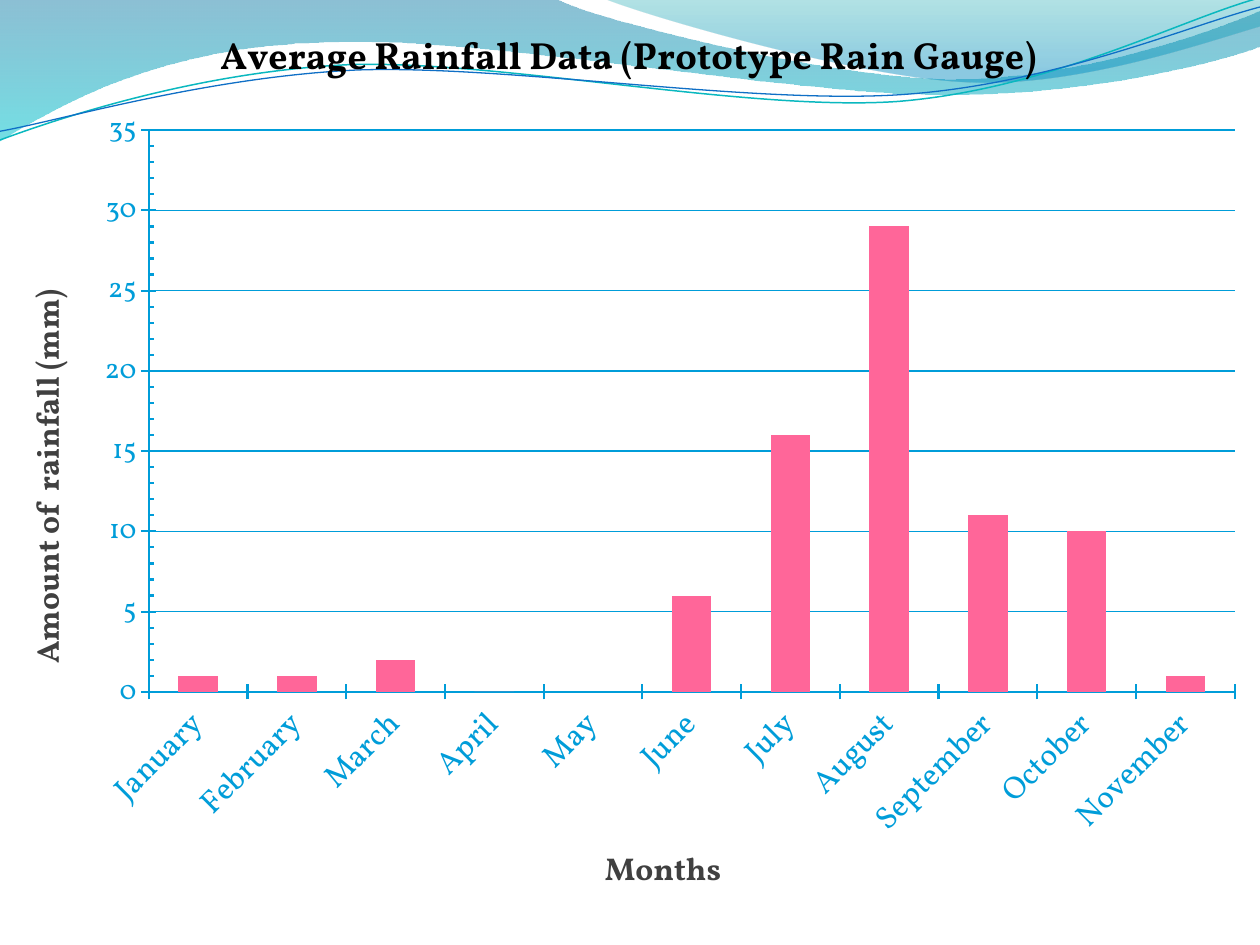
from lxml import etree
from pptx import Presentation
from pptx.chart.data import CategoryChartData
from pptx.dml.color import RGBColor
from pptx.enum.chart import XL_CHART_TYPE, XL_TICK_MARK
from pptx.oxml import parse_xml
from pptx.oxml.ns import nsdecls, qn
from pptx.util import Pt

COLUMN = XL_CHART_TYPE.COLUMN_CLUSTERED
CROSS, INSIDE = XL_TICK_MARK.CROSS, XL_TICK_MARK.INSIDE

WIDE, HIGH = 720, 540
THEME = {
    "font": "Vollkorn",
    "title": 21.6, "label": 18, "scale": 16,
    "black": "000000", "grey": "404040", "blue": "009DD9", "pink": "FF6699",
}

TITLE = "Average Rainfall Data (Prototype Rain Gauge)"
MONTHS, AMOUNT = "Months", "Amount of  rainfall (mm)"
RAIN = [
    ("January", 1), ("February", 1), ("March", 2), ("April", 0),
    ("May", None), ("June", 6), ("July", 16), ("August", 29),
    ("September", 11), ("October", 10), ("November", 1),
]

# Pairs are straight steps, sixes are cubic curves; stops are place, colour, opacity.
BANDS = [
    ([(0, 0), (317, -1), (343, 12, 478, 45, 546, 45), (614, 45, 690, 19, 720, 6),
      (721, 26), (708, 32, 626, 55, 537, 54), (448, 54, 275, 20, 185, 24),
      (93, 26, 33, 60, -1, 81)],
     [(0, "0074A1", 45), (1, "00C6CF", 55)]),
    ([(345, -1), (366, 8, 491, 45, 554, 47), (616, 50, 692, 23, 720, 15), (720, 0)],
     [(0, "00A1A9", 30), (0.8, "008BBF", 45)]),
]
WAVES = [
    ([(0, 80), (35, 67, 114, 41, 199, 37), (284, 34, 427, 64, 513, 58),
      (600, 51, 675, 11, 719, -1)], "0AB8BF", 0.85),
    ([(0, 75), (34, 69, 118, 44, 204, 40), (290, 37, 430, 60, 516, 54),
      (602, 48, 678, 15, 720, 4)], "0F6FC6", 0.75),
]


def rgb(code):
    return RGBColor.from_string(code)


def outline(slide, steps, close):
    """Draw through all points, then join each curve's three into one cubic."""
    dots = [(Pt(s[i]), Pt(s[i + 1])) for s in steps for i in range(0, len(s), 2)]
    pen = slide.shapes.build_freeform(*dots[0])
    pen.add_line_segments(dots[1:], close=close)
    shape = pen.convert_to_shape()
    shape.shadow.inherit = False
    lines = iter(list(shape._element.spPr.iter(qn("a:lnTo"))))
    for step in steps[1:]:
        line = next(lines)
        if len(step) == 6:
            curve = etree.Element(qn("a:cubicBezTo"))
            line.addprevious(curve)
            for part in (line, next(lines), next(lines)):
                curve.append(part[0])
                part.getparent().remove(part)
    return shape


def add_band(slide, steps, stops):
    shape = outline(slide, steps, True)
    shape.line.fill.background()
    shape.fill.gradient()
    shape.fill.gradient_angle = 270
    for stop, (place, code, _) in zip(shape.fill.gradient_stops, stops):
        stop.position = place
        stop.color.rgb = rgb(code)
    tints = shape._element.spPr.iter(qn("a:srgbClr"))
    for tint, (_, _, part) in zip(list(tints), stops):
        etree.SubElement(tint, qn("a:alpha")).set("val", str(part * 1000))


def add_wave(slide, steps, code, width):
    shape = outline(slide, steps, False)
    shape.fill.background()
    shape.line.color.rgb = rgb(code)
    shape.line.width = Pt(width)


def style(font, size, code, bold=False):
    font.name, font.size, font.bold = THEME["font"], Pt(size), bold
    font.color.rgb = rgb(THEME[code])


def layout(left, top, size=None):
    """Make a manual chart layout from points; a size marks the inner plot."""
    vals = [("xMode", "edge"), ("yMode", "edge"), ("x", left / WIDE), ("y", top / HIGH)]
    if size:
        vals.insert(0, ("layoutTarget", "inner"))
        vals += [("w", size[0] / WIDE), ("h", size[1] / HIGH)]
    body = "".join(f'<c:{tag} val="{val}"/>' for tag, val in vals)
    return parse_xml(f"<c:layout {nsdecls('c')}><c:manualLayout>{body}"
                     "</c:manualLayout></c:layout>")


def clear(node):
    for old in node.findall(qn("c:layout")):
        node.remove(old)


def add_title(owner, text, size, code, left, top):
    owner.has_title = True
    title = owner.chart_title if hasattr(owner, "chart_title") else owner.axis_title
    run = title.text_frame.paragraphs[0].add_run()
    run.text = text
    style(run.font, size, code, True)
    node = title._element
    clear(node)
    node.find(qn("c:tx")).addnext(layout(left, top))


def set_axis(axis, size):
    axis.major_tick_mark = CROSS
    axis.format.line.color.rgb = rgb(THEME["blue"])
    axis.format.line.width = Pt(1.25)
    style(axis.tick_labels.font, size, "blue")


def add_chart(slide):
    data = CategoryChartData()
    data.categories = [month for month, _ in RAIN]
    data.add_series("Series 1", [val for _, val in RAIN])
    chart = slide.shapes.add_chart(COLUMN, 0, 0, Pt(WIDE), Pt(HIGH), data).chart
    style(chart.font, THEME["label"], "black")
    chart.has_legend = False

    plot = chart.plots[0]
    plot.gap_width = 150
    plot.vary_by_categories = False
    fill = plot.series[0].format.fill
    fill.solid()
    fill.fore_color.rgb = rgb(THEME["pink"])

    cat, val = chart.category_axis, chart.value_axis
    set_axis(cat, THEME["label"])
    cat.tick_labels._element.txPr.bodyPr.set("rot", "-2700000")
    set_axis(val, THEME["scale"])
    val.minimum_scale, val.maximum_scale = 0, 35
    val.major_unit, val.minor_unit = 5, 1
    val.minor_tick_mark = INSIDE
    val.has_major_gridlines = True
    grid = val.major_gridlines.format.line
    grid.color.rgb = rgb(THEME["blue"])
    grid.width = Pt(0.75)

    add_title(chart, TITLE, THEME["title"], "black", 122, 12)
    add_title(cat, MONTHS, THEME["label"], "grey", 342.5, 480.5)
    add_title(val, AMOUNT, THEME["label"], "grey", 11, 162)
    val.axis_title.text_frame._txBody.bodyPr.set("rot", "-5400000")

    root = chart._chartSpace
    area = root.chart.plotArea
    clear(area)
    area.insert(0, layout(85, 74.4, (620.6, 321)))
    root.chart.addnext(parse_xml(
        f"<c:spPr {nsdecls('c', 'a')}><a:noFill/><a:ln><a:noFill/></a:ln></c:spPr>"))


def main():
    deck = Presentation()
    deck.slide_width, deck.slide_height = Pt(WIDE), Pt(HIGH)
    slide = deck.slides.add_slide(deck.slide_layouts[6])
    for band in BANDS:
        add_band(slide, *band)
    for wave in WAVES:
        add_wave(slide, *wave)
    add_chart(slide)
    deck.save("out.pptx")


if __name__ == "__main__":
    main()
